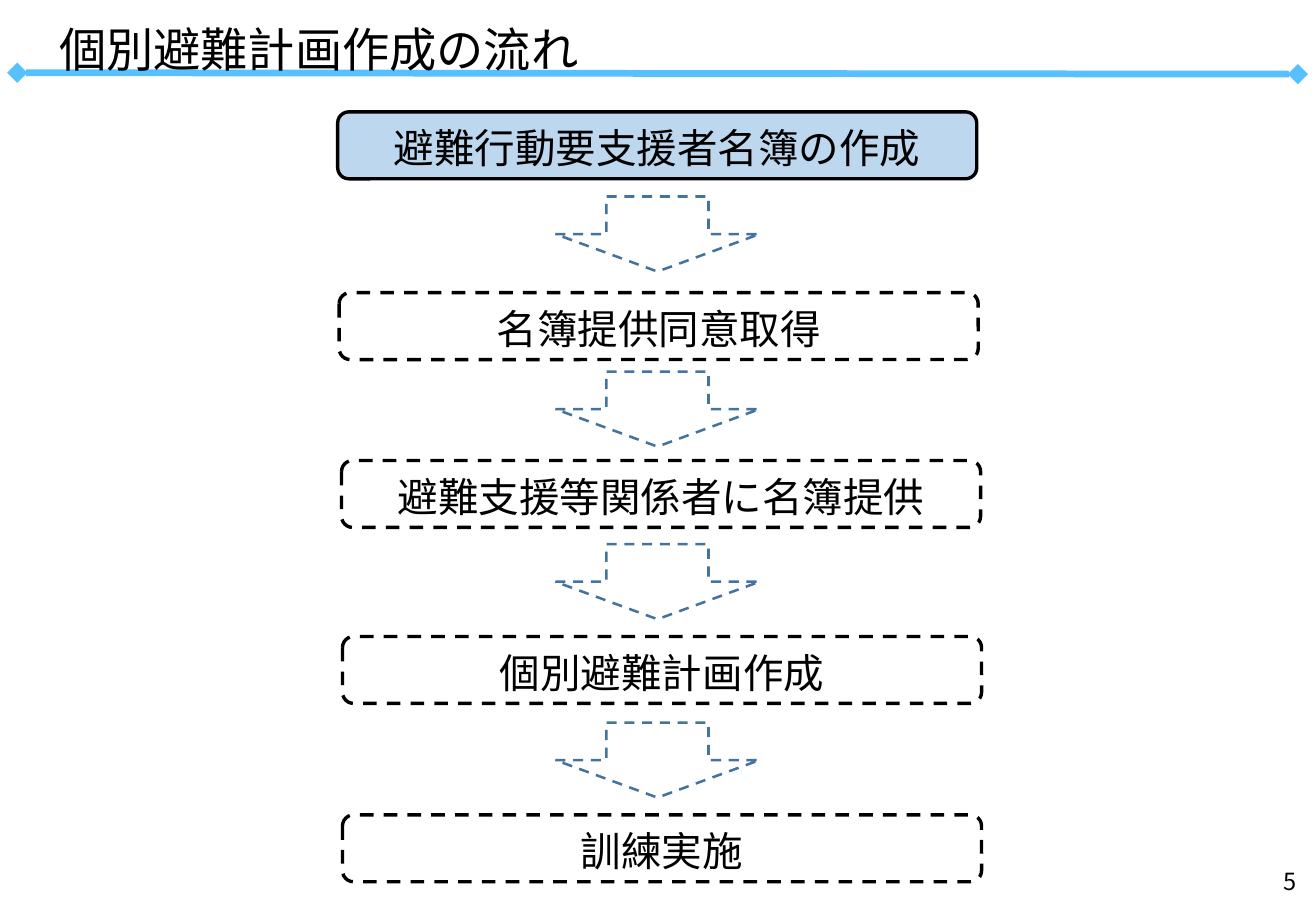
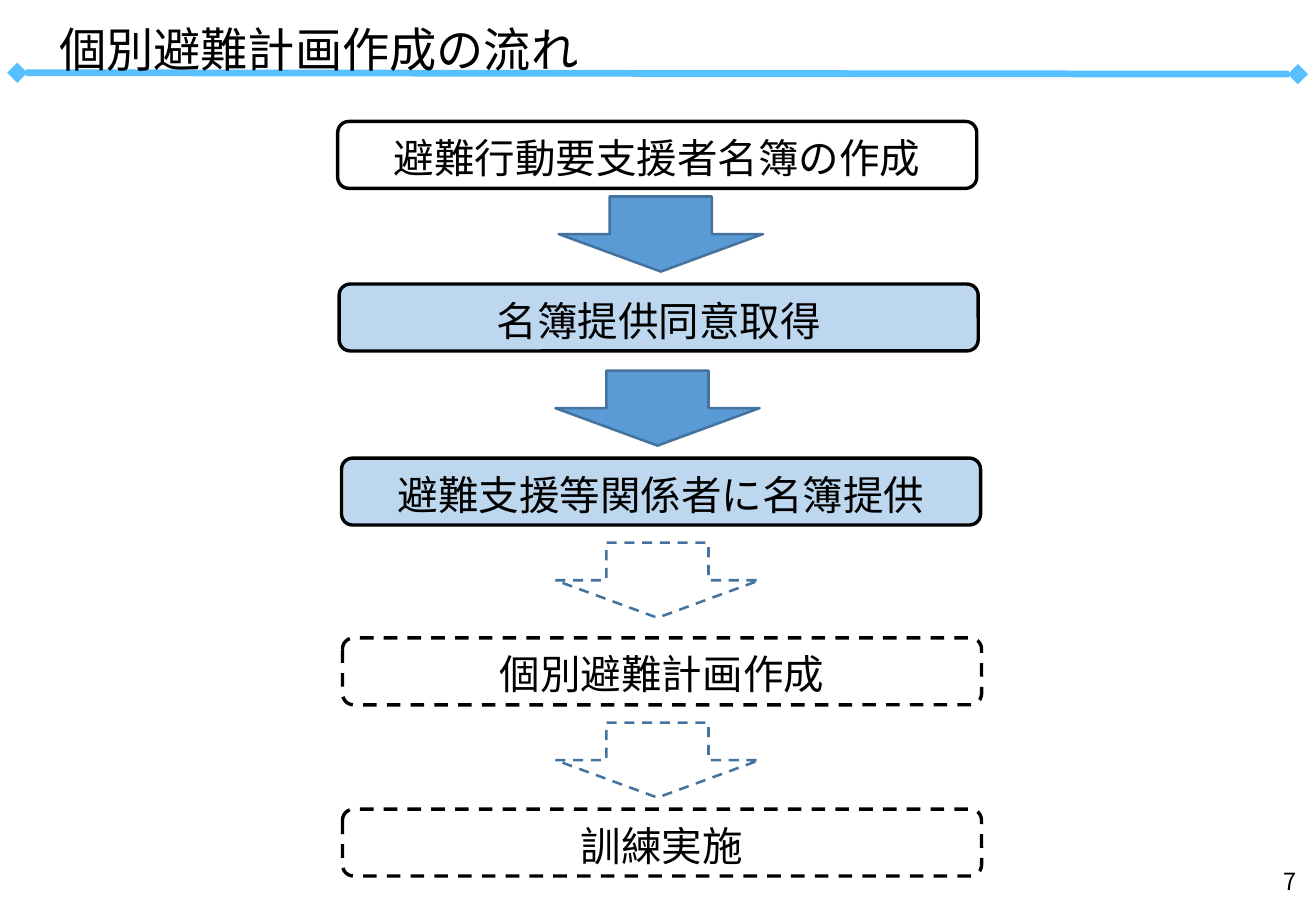
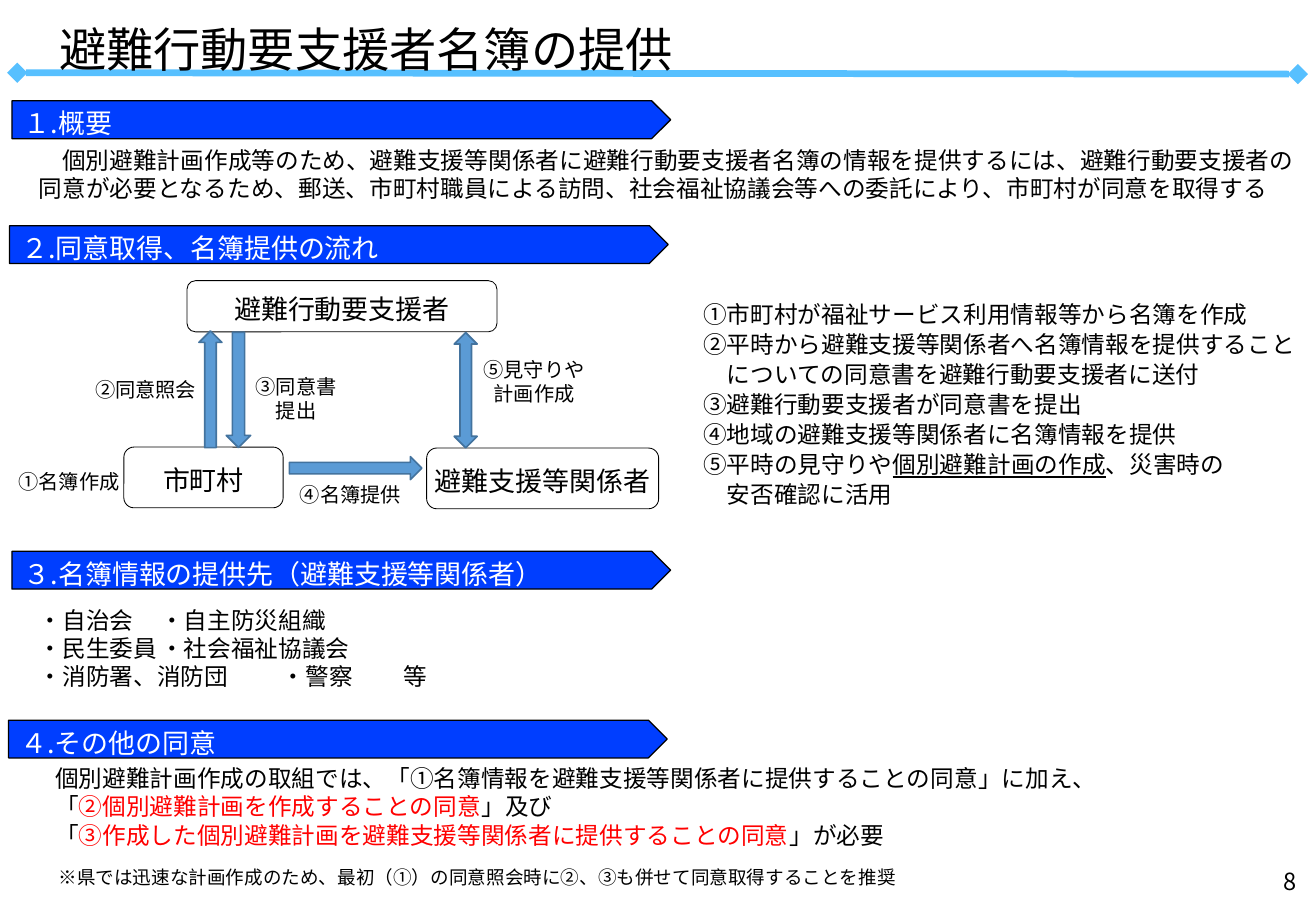
from lxml import etree
from pptx import Presentation
from pptx.dml.color import RGBColor
from pptx.enum.dml import MSO_LINE
from pptx.enum.shapes import MSO_CONNECTOR, MSO_SHAPE
from pptx.enum.text import MSO_ANCHOR, PP_ALIGN
from pptx.oxml.ns import qn
from pptx.util import Cm, Pt

LEFT, CENTER, RIGHT = PP_ALIGN.LEFT, PP_ALIGN.CENTER, PP_ALIGN.RIGHT
TOP, MIDDLE = MSO_ANCHOR.TOP, MSO_ANCHOR.MIDDLE
ROUNDED, PENTAGON = MSO_SHAPE.ROUNDED_RECTANGLE, MSO_SHAPE.PENTAGON
DOWN_ARROW, RIGHT_ARROW = MSO_SHAPE.DOWN_ARROW, MSO_SHAPE.RIGHT_ARROW
BOTH_ARROW = MSO_SHAPE.LEFT_RIGHT_ARROW
STRAIGHT, DASH = MSO_CONNECTOR.STRAIGHT, MSO_LINE.DASH

FONT = "Noto Sans CJK JP"
BLACK, WHITE, RED = "000000", "FFFFFF", "FF0000"
SKY, PALE, BLUE, STEEL, BAND = "57C0FF", "BDD7EE", "5B9BD5", "43739E", "003EFF"

STEPS = ["避難行動要支援者名簿の作成", "名簿提供同意取得", "避難支援等関係者に名簿提供",
         "個別避難計画作成", "訓練実施"]
STEP_LEFTS = [7.06, 7.09, 7.14, 7.16, 7.16]
DONE, CURRENT, FUTURE = (WHITE, None), (PALE, None), (WHITE, DASH)
ACTIVE_ARROW, FUTURE_ARROW = (BLUE, None), (WHITE, DASH)


def color(value):
    return RGBColor.from_string(value)


class Deck:
    """Holds the shared style and the slide being built."""

    def __init__(self):
        self.presentation = Presentation()
        self.presentation.slide_width = Cm(27.51)
        self.presentation.slide_height = Cm(19.05)
        self.slide = None

    def new_slide(self, title, number):
        self.slide = self.presentation.slides.add_slide(self.presentation.slide_layouts[6])
        self.rule(0.36, 1.52, 27.13, 1.55)
        frame = self.text(0, 0.3, 27.51, 1.22, [title], 28, before=5.6)
        frame.margin_left = Cm(1.24)
        self.text(21.59, 17.91, 5.77, 1.02, [number], 14, align=RIGHT, anchor=MIDDLE)

    def rule(self, left, top, right, bottom):
        connector = self.slide.shapes.add_connector(STRAIGHT, Cm(left), Cm(top), Cm(right), Cm(bottom))
        connector.line.color.rgb = color(SKY)
        connector.line.width = Pt(4)
        properties = connector._element.spPr
        line = properties.find(qn("a:ln"))
        for end in ("a:headEnd", "a:tailEnd"):
            etree.SubElement(line, qn(end), type="diamond")
        etree.SubElement(properties, qn("a:effectLst"))

    def fill_frame(self, frame, paragraphs, size, ink=BLACK, align=LEFT, before=0):
        frame.word_wrap = True
        for index, content in enumerate(paragraphs):
            paragraph = frame.paragraphs[0] if index == 0 else frame.add_paragraph()
            paragraph.alignment = align
            paragraph.space_before = Pt(before)
            for piece in [content] if isinstance(content, str) else content:
                words, style = (piece, {}) if isinstance(piece, str) else piece
                run = paragraph.add_run()
                run.text = words
                run.font.name = FONT
                run.font.size = Pt(style.get("size", size))
                run.font.color.rgb = color(style.get("ink", ink))
                if style.get("underline"):
                    run.font.underline = True
                etree.SubElement(run.font._element, qn("a:ea"), typeface=FONT)

    def indent(self, paragraph, left=0, first=0, tabs=()):
        properties = paragraph._p.get_or_add_pPr()
        properties.set("marL", str(Pt(left)))
        properties.set("indent", str(Pt(first)))
        if tabs:
            stops = etree.SubElement(properties, qn("a:tabLst"))
            for position in tabs:
                etree.SubElement(stops, qn("a:tab"), pos=str(Pt(position)), algn="l")

    def text(self, left, top, width, height, paragraphs, size, anchor=TOP, **style):
        box = self.slide.shapes.add_textbox(Cm(left), Cm(top), Cm(width), Cm(height))
        box.text_frame.vertical_anchor = anchor
        self.fill_frame(box.text_frame, paragraphs, size, **style)
        return box.text_frame

    def shape(self, kind, left, top, width, height, fill, line, weight, dash=None, rotation=0):
        shape = self.slide.shapes.add_shape(kind, Cm(left), Cm(top), Cm(width), Cm(height))
        shape.shadow.inherit = False
        shape.fill.solid()
        shape.fill.fore_color.rgb = color(fill)
        shape.line.color.rgb = color(line)
        shape.line.width = Pt(weight)
        if dash:
            shape.line.dash_style = dash
        shape.rotation = rotation
        return shape

    def box(self, left, top, width, height, label, size, weight, fill=WHITE, dash=None):
        shape = self.shape(ROUNDED, left, top, width, height, fill, BLACK, weight, dash)
        frame = shape.text_frame
        frame.margin_left = frame.margin_right = frame.margin_top = Cm(0.1)
        frame.margin_bottom = 0
        frame.vertical_anchor = MIDDLE
        self.fill_frame(frame, [label], size, align=CENTER)

    def heading(self, left, top, label):
        frame = self.shape(PENTAGON, left, top, 13.77, 0.79, BAND, BLACK, 0.75).text_frame
        frame.vertical_anchor = TOP
        self.fill_frame(frame, [label], 16, ink=WHITE, before=3.2)

    def arrow(self, kind, left, top, width, height, rotation=0):
        self.shape(kind, left, top, width, height, BLUE, STEEL, 1, rotation=rotation)

    def caption(self, left, top, width, height, *lines):
        self.text(left, top, width, height, lines, 12, align=CENTER)

    def flow(self, step_tops, step_states, arrow_places, arrow_states):
        for label, left, top, (fill, dash) in zip(STEPS, STEP_LEFTS, step_tops, step_states):
            self.box(left, top, 13.36, 1.4, label, 24, 2, fill, dash)
        for (left, top), (fill, dash) in zip(arrow_places, arrow_states):
            self.shape(DOWN_ARROW, left, top, 4.27, 1.57, fill, STEEL, 1.5, dash)


def add_consent_diagram(deck):
    deck.box(3.91, 5.87, 6.48, 1.07, "避難行動要支援者", 16, 0.5)
    deck.box(2.59, 9.35, 3.33, 1.27, "市町村", 16, 0.5)
    deck.box(8.92, 9.37, 4.85, 1.27, "避難支援等関係者", 16, 0.5)
    deck.arrow(RIGHT_ARROW, 3.18, 7.9, 2.44, 0.48, 270)
    deck.arrow(RIGHT_ARROW, 3.78, 7.9, 2.41, 0.51, 90)
    deck.arrow(RIGHT_ARROW, 6.05, 9.55, 2.77, 0.48)
    deck.arrow(BOTH_ARROW, 8.53, 7.92, 2.41, 0.48, 90)
    deck.caption(-0.41, 9.68, 3.71, 0.76, "①名簿作成")
    deck.caption(1.19, 7.77, 3.71, 0.76, "②同意照会")
    deck.caption(4.78, 7.7, 2.82, 1.27, "③同意書", "提出")
    deck.caption(5.92, 9.96, 2.82, 0.76, "④名簿提供")
    deck.caption(9.78, 7.34, 2.77, 1.27, "⑤見守りや計画作成")


def add_provision_slide(deck):
    deck.new_slide("避難行動要支援者名簿の提供", "8")
    deck.heading(0.25, 2.11, "１.概要")
    overview = deck.text(0.56, 2.92, 26.97, 1.4, [
        "個別避難計画作成等のため、避難支援等関係者に避難行動要支援者名簿の情報を提供するには、"
        "避難行動要支援者の同意が必要となるため、郵送、市町村職員による訪問、"
        "社会福祉協議会等への委託により、市町村が同意を取得する"], 14)
    deck.indent(overview.paragraphs[0], first=14)

    deck.heading(0.2, 4.72, "２.同意取得、名簿提供の流れ")
    add_consent_diagram(deck)
    procedure = deck.text(14.45, 5.74, 13.08, 5.41, [
        "①市町村が福祉サービス利用情報等から名簿を作成",
        "②平時から避難支援等関係者へ名簿情報を提供すること",
        "についての同意書を避難行動要支援者に送付",
        "③避難行動要支援者が同意書を提出",
        "④地域の避難支援等関係者に名簿情報を提供",
        ["⑤平時の見守りや", ("個別避難計画の作成", {"underline": True}), "、災害時の"],
        "安否確認に活用"], 14, anchor=MIDDLE, before=1)
    for continuation in (2, 6):
        deck.indent(procedure.paragraphs[continuation], left=14)

    deck.heading(0.25, 11.53, "３.名簿情報の提供先（避難支援等関係者）")
    recipients = deck.text(0.56, 12.27, 13.39, 2.57, [
        "・自治会\t・自主防災組織",
        "・民生委員\t・社会福祉協議会",
        "・消防署、消防団\t・警察\t等"], 14, anchor=MIDDLE)
    for paragraph in recipients.paragraphs:
        deck.indent(paragraph, tabs=(84, 140, 210))

    deck.heading(0.18, 15.06, "４.その他の同意")
    consent = deck.text(0.41, 15.85, 26.72, 2.87, [
        "個別避難計画作成の取組では、「①名簿情報を避難支援等関係者に提供することの同意」に加え、",
        ["「", ("②個別避難計画を作成することの同意", {"ink": RED}), "」及び"],
        ["「", ("③作成した個別避難計画を避難支援等関係者に提供することの同意", {"ink": RED}), "」が必要"],
        [("※県では迅速な計画作成のため、最初（①）の同意照会時に②、③も併せて同意取得することを推奨",
          {"size": 11})]], 14)
    for paragraph in consent.paragraphs:
        deck.indent(paragraph, left=14)
    note = consent.paragraphs[-1]
    deck.indent(note, left=16)
    note.space_before = Pt(10)


def main():
    deck = Deck()
    flow_title = "個別避難計画作成の流れ"
    deck.new_slide(flow_title, "5")
    deck.flow([2.34, 6.12, 9.63, 13.31, 17.04], [CURRENT] + [FUTURE] * 4,
              [(11.61, top) for top in (4.11, 7.77, 11.38, 15.11)], [FUTURE_ARROW] * 4)
    deck.new_slide(flow_title, "7")
    deck.flow([2.54, 5.94, 9.58, 13.34, 16.92], [DONE] + [CURRENT] * 2 + [FUTURE] * 2,
              [(11.68, 4.11), (11.61, 7.75), (11.61, 11.35), (11.61, 15.11)],
              [ACTIVE_ARROW] * 2 + [FUTURE_ARROW] * 2)
    add_provision_slide(deck)
    deck.presentation.save("out.pptx")


if __name__ == "__main__":
    main()
